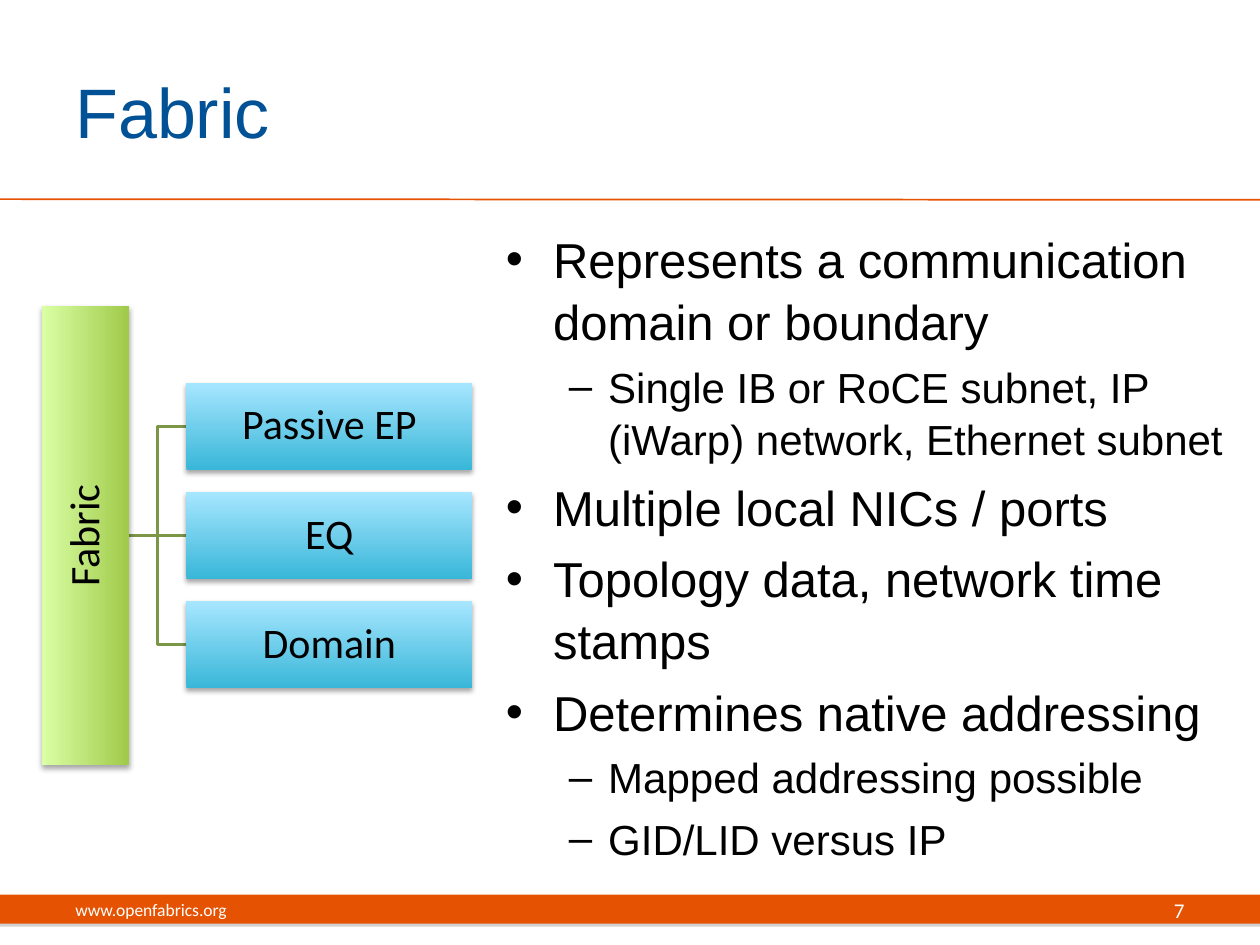
"""Build the Fabric slide: an object tree beside a bulleted list."""
from lxml.etree import SubElement
from pptx import Presentation
from pptx.dml.color import RGBColor
from pptx.enum.shapes import MSO_CONNECTOR as Link, MSO_SHAPE as Form
from pptx.enum.text import MSO_ANCHOR as Anchor, PP_ALIGN as Align
from pptx.oxml import parse_xml
from pptx.oxml.ns import nsdecls, qn
from pptx.util import Pt

ORANGE = RGBColor(0xE5, 0x53, 0x02)
NAVY = RGBColor(0x00, 0x51, 0x95)
OLIVE = RGBColor(0x7C, 0x96, 0x47)
GREEN = (RGBColor(0xA0, 0xCA, 0x4A), RGBColor(0xDA, 0xFF, 0xA5))
BLUE = (RGBColor(0x39, 0xB7, 0xD8), RGBColor(0xA7, 0xE6, 0xFF))
BLACK = RGBColor(0, 0, 0)
GRAY = RGBColor(0x80, 0x80, 0x80)
WHITE = RGBColor(0xFF, 0xFF, 0xFF)


def write(para, text, size=24, font="Calibri", color=BLACK, align=Align.LEFT,
          lead=1.0, before=0, bullet=None, left=0, hang=0):
    if bullet:
        props = para._p.get_or_add_pPr()
        props.set("marL", str(Pt(left)))
        props.set("indent", str(-Pt(hang)))
        SubElement(props, qn("a:buFont")).set("typeface", "Arial")
        SubElement(props, qn("a:buChar")).set("char", bullet)
    para.alignment = align
    para.line_spacing = lead
    para.space_before = Pt(before)
    run = para.add_run()
    run.text = text
    run.font.size = Pt(size)
    run.font.name = font
    run.font.color.rgb = color


def shade(shape, color, blur):
    shape.shadow.inherit = False
    glow = parse_xml(
        f'<a:outerShdw {nsdecls("a")} blurRad="{Pt(blur)}" dist="{Pt(1.8)}" '
        f'dir="5400000" rotWithShape="0"><a:srgbClr val="{color}">'
        '<a:alpha val="35000"/></a:srgbClr></a:outerShdw>')
    shape._element.spPr.find(qn("a:effectLst")).append(glow)


deck = Presentation()
deck.slide_width, deck.slide_height = Pt(720), Pt(540)
slide = deck.slides.add_slide(deck.slide_layouts[6])
shapes = slide.shapes

band = shapes.add_shape(Form.RECTANGLE, 0, Pt(511.2), Pt(720), Pt(16.6))
band.fill.solid()
band.fill.fore_color.rgb = ORANGE
band.line.fill.background()
shade(band, GRAY, 0)

mid, step = 306, 62.4
trunk, bend, edge = 74, 90, 106.5
lines = [((0, 113.8), (720, 114.2), ORANGE, 1),
         ((trunk, mid), (edge, mid), OLIVE, 2)]
for start, end, color, width in lines:
    rule = shapes.add_connector(Link.STRAIGHT, *map(Pt, start + end))
    rule.line.color.rgb = color
    rule.line.width = Pt(width)
    SubElement(rule._element.spPr, qn("a:effectLst"))

for side in (1, -1):
    y = mid + side * step
    pen = shapes.build_freeform(Pt(trunk), Pt(mid))
    pen.add_line_segments([(Pt(bend), Pt(mid)), (Pt(bend), Pt(y)),
                           (Pt(edge), Pt(y))], close=False)
    branch = pen.convert_to_shape()
    branch.fill.background()
    branch.line.color.rgb = OLIVE
    branch.line.width = Pt(2)
    branch.shadow.inherit = False

tall = 49.6
nodes = [("Fabric", -82, mid, 262, GREEN, 270),
         ("Passive EP", edge, mid - step, 163.4, BLUE, 0),
         ("EQ", edge, mid, 163.4, BLUE, 0),
         ("Domain", edge, mid + step, 163.4, BLUE, 0)]
for name, x, y, wide, tints, turn in nodes:
    node = shapes.add_shape(Form.RECTANGLE, Pt(x), Pt(y - tall / 2),
                            Pt(wide), Pt(tall))
    node.rotation = turn
    node.fill.gradient()
    node.fill.gradient_angle = 90
    for stop, tint, place in zip(node.fill.gradient_stops, tints, (0, 1)):
        stop.color.rgb = tint
        stop.position = place
    node.line.fill.background()
    shade(node, BLACK, 3.1)
    frame = node.text_frame
    frame.word_wrap = True
    frame.vertical_anchor = Anchor.MIDDLE
    frame.margin_left = frame.margin_right = Pt(1.2)
    frame.margin_top = frame.margin_bottom = Pt(1.2)
    write(frame.paragraphs[0], name, align=Align.CENTER, lead=0.9)

labels = [
    ("Fabric", (36, 18, 588, 90), dict(size=40, font="Arial", color=NAVY)),
    ("www.openfabrics.org", (36, 505.5, 228, 28.8),
     dict(size=10, color=WHITE)),
    ("7", (516, 505.5, 168, 28.8),
     dict(size=12, color=WHITE, align=Align.RIGHT)),
]
for text, area, style in labels:
    frame = shapes.add_textbox(*map(Pt, area)).text_frame
    frame.word_wrap = True
    frame.vertical_anchor = Anchor.MIDDLE
    write(frame.paragraphs[0], text, **style)

levels = [dict(size=28, before=5.6, bullet="•", left=27, hang=27),
          dict(size=24, before=4.8, bullet="–", left=58.5, hang=22.5)]
points = [
    (0, "Represents a communication domain or boundary"),
    (1, "Single IB or RoCE subnet, IP (iWarp) network, Ethernet subnet"),
    (0, "Multiple local NICs / ports"),
    (0, "Topology data, network time stamps"),
    (0, "Determines native addressing"),
    (1, "Mapped addressing possible"),
    (1, "GID/LID versus IP"),
]
body = shapes.add_textbox(Pt(282), Pt(126), Pt(426), Pt(356.4)).text_frame
body.word_wrap = True
for i, (level, text) in enumerate(points):
    para = body.add_paragraph() if i else body.paragraphs[0]
    para.level = level
    style = levels[level] if i else {**levels[level], "before": 0}
    write(para, text, font="Arial", lead=1.05, **style)

deck.save("out.pptx")
